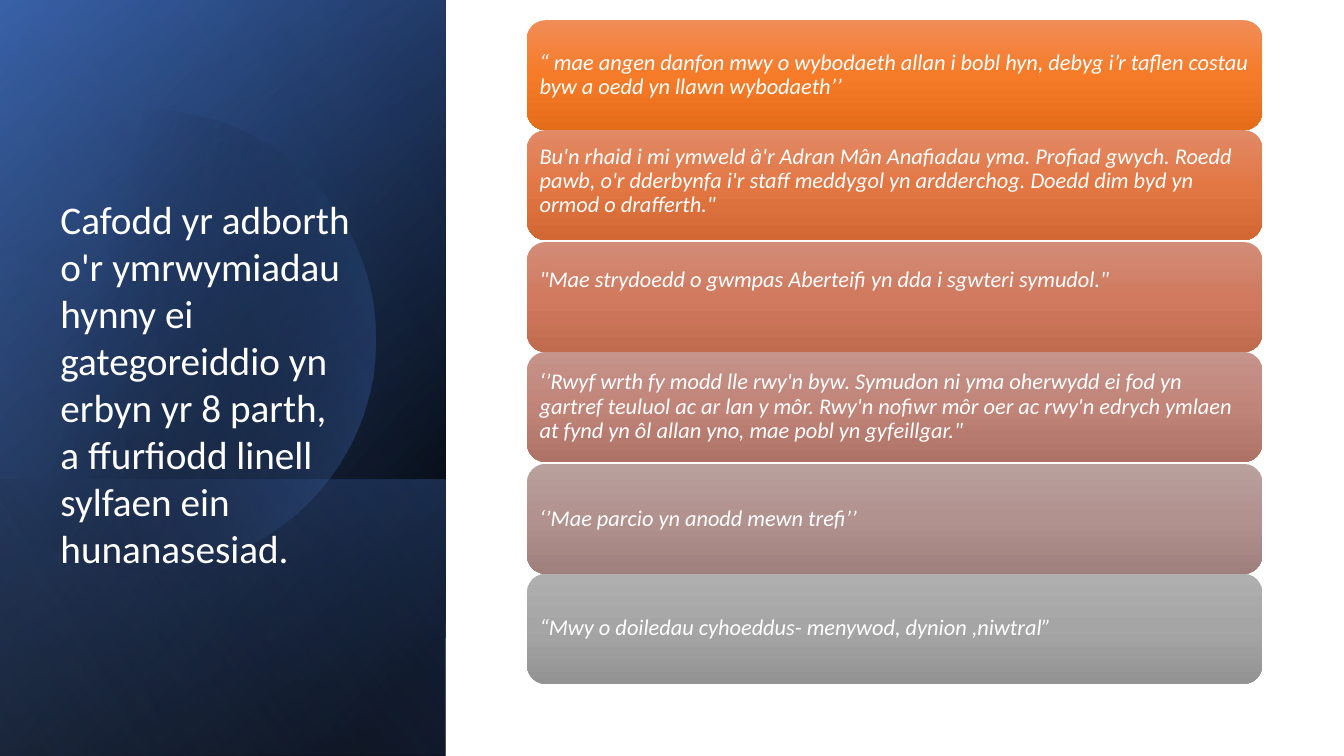
"""Build the slide of feedback quotes beside a dark title panel."""
from dataclasses import dataclass
from math import cos, radians, sin

from lxml import etree
from pptx import Presentation
from pptx.dml.color import RGBColor
from pptx.enum import shapes, text
from pptx.oxml import ns
from pptx import util as u

WHITE = RGBColor(0xFF, 0xFF, 0xFF)
BLACK = RGBColor(0x00, 0x00, 0x00)
NAVY = RGBColor(0x2F, 0x55, 0x97)
BLUE = RGBColor(0x44, 0x72, 0xC4)
PALE_BLUE = RGBColor(0x8F, 0xAA, 0xDC)
ORANGE = RGBColor(0xF1, 0x8C, 0x57), RGBColor(0xF6, 0x7B, 0x28), RGBColor(0xE5, 0x6C, 0x19)
RUST = RGBColor(0xE1, 0x8A, 0x66), RGBColor(0xE3, 0x77, 0x44), RGBColor(0xD2, 0x67, 0x34)
CORAL = RGBColor(0xD2, 0x8C, 0x78), RGBColor(0xD1, 0x7A, 0x5F), RGBColor(0xC0, 0x6A, 0x4E)
ROSE = RGBColor(0xC5, 0x94, 0x8B), RGBColor(0xC1, 0x84, 0x78), RGBColor(0xAF, 0x72, 0x67)
MAUVE = RGBColor(0xB9, 0xA0, 0x9D), RGBColor(0xB2, 0x92, 0x8F), RGBColor(0xA0, 0x80, 0x7D)
GREY = RGBColor(0xAF, 0xAF, 0xAF), RGBColor(0xA5, 0xA5, 0xA5), RGBColor(0x93, 0x93, 0x93)

PANEL_W, SLIDE_W, SLIDE_H = 11.23, 33.86, 19.05
CARD_X, CARD_Y, CARD_W, CARD_H = 13.28, 0.51, 18.52, 2.77
PAIR_PITCH = 5.59


@dataclass(frozen=True)
class Stop:
    """One gradient stop, with position and opacity in percent."""
    pos: int
    color: RGBColor
    alpha: int = 100


@dataclass(frozen=True)
class Layer:
    """A gradient layer of the panel, from its top to the slide's bottom."""
    top: float
    stops: tuple[Stop, ...]
    angle: int


@dataclass(frozen=True)
class Card:
    """A quote, its colours and the extra room below its text."""
    quote: str
    colors: tuple[RGBColor, RGBColor, RGBColor]
    room: float = 0


BACK_LAYERS = (
    Layer(0, (Stop(8, BLACK), Stop(100, NAVY)), 50),
    Layer(0, (Stop(0, BLACK, 0), Stop(99, BLUE, 46)), 30),
    Layer(12.09, (Stop(2, BLUE, 29), Stop(100, BLACK, 30)), 130),
)
FRONT_LAYER = Layer(0, (Stop(0, BLACK, 0), Stop(99, PALE_BLUE, 11)), 120)
DISC_STOPS = (Stop(29, BLACK, 0), Stop(100, BLUE, 43))

CARDS = (
    Card("“ mae angen danfon mwy o wybodaeth allan i bobl hyn, debyg i’r taflen costau "
         "byw a oedd yn llawn wybodaeth’’", ORANGE),
    Card("Bu'n rhaid i mi ymweld â'r Adran Mân Anafiadau yma. Profiad gwych. Roedd pawb, "
         "o'r dderbynfa i'r staff meddygol yn ardderchog. Doedd dim byd yn ormod o "
         "drafferth.\"", RUST, 0.2),
    Card("\"Mae strydoedd o gwmpas Aberteifi yn dda i sgwteri symudol.\"", CORAL, 0.84),
    Card("‘’Rwyf wrth fy modd lle rwy'n byw. Symudon ni yma oherwydd ei fod yn gartref "
         "teuluol ac ar lan y môr. Rwy'n nofiwr môr oer ac rwy'n edrych ymlaen at fynd yn "
         "ôl allan yno, mae pobl yn gyfeillgar.\"", ROSE),
    Card("‘’Mae parcio yn anodd mewn trefi’’", MAUVE),
    Card("“Mwy o doiledau cyhoeddus- menywod, dynion ,niwtral”", GREY),
)
TITLE = ("Cafodd yr adborth o'r ymrwymiadau hynny ei gategoreiddio yn erbyn yr 8 parth,",
         "a ffurfiodd linell sylfaen ein hunanasesiad.")


def apply(target, values: dict) -> None:
    """Set every attribute named in values."""
    for name, value in values.items():
        setattr(target, name, value)


def paint(sp, stops: tuple[Stop, ...], angle: int) -> None:
    """Give a shape a linear gradient, without line or shadow."""
    sp.shadow.inherit = False
    sp.line.fill.background()
    sp.fill.background()
    grad = etree.Element(ns.qn("a:gradFill"), rotWithShape="1")
    stop_list = etree.SubElement(grad, ns.qn("a:gsLst"))
    for stop in stops:
        gs = etree.SubElement(stop_list, ns.qn("a:gs"), pos=str(stop.pos * 1000))
        color = etree.SubElement(gs, ns.qn("a:srgbClr"), val=str(stop.color))
        etree.SubElement(color, ns.qn("a:alpha"), val=str(stop.alpha * 1000))
    etree.SubElement(grad, ns.qn("a:lin"), ang=str(angle * 60000), scaled="0")
    sp_pr = sp.element.spPr
    sp_pr.replace(sp_pr.find(ns.qn("a:noFill")), grad)


def write(sp, paragraphs: tuple[str, ...], frame: dict, para: dict, font: dict) -> None:
    """Fill a shape with formatted white Calibri text."""
    tf = sp.text_frame
    apply(tf, {"word_wrap": True, "auto_size": text.MSO_AUTO_SIZE.NONE,
               "vertical_anchor": text.MSO_ANCHOR.MIDDLE, **frame})
    for i, line in enumerate(paragraphs):
        p = tf.add_paragraph() if i else tf.paragraphs[0]
        apply(p, {"alignment": text.PP_ALIGN.LEFT, "space_before": u.Pt(0), **para})
        r = p.add_run()
        r.text = line
        apply(r.font, {"name": "Calibri", **font})
        r.font.color.rgb = WHITE


def add_layer(s, layer: Layer) -> None:
    """Draw a panel layer as a mirrored rectangle turned by a quarter."""
    length = SLIDE_H - layer.top
    sp = s.shapes.add_shape(
        shapes.MSO_SHAPE.RECTANGLE, u.Cm((PANEL_W - length) / 2),
        u.Cm(layer.top + (length - PANEL_W) / 2), u.Cm(length), u.Cm(PANEL_W))
    sp.rotation = 90
    sp.element.spPr.xfrm.set("flipH", "1")
    paint(sp, layer.stops, layer.angle)


def add_disc(s) -> None:
    """Draw the disc that the left slide edge cuts."""
    cx, cy, radius = 3.66, 8.56, 5.8
    arc = [(u.Cm(max(0, cx + radius * cos(radians(a)))), u.Cm(cy + radius * sin(radians(a))))
           for a in range(-129, 130, 2)]
    builder = s.shapes.build_freeform(*arc[0])
    builder.add_line_segments(arc[1:], close=True)
    paint(builder.convert_to_shape(), DISC_STOPS, 14)


def add_card(s, index: int, card: Card) -> None:
    """Draw one quote card; cards stand in pairs that touch."""
    pair, second = divmod(index, 2)
    top = CARD_Y + pair * PAIR_PITCH + second * CARD_H
    sp = s.shapes.add_shape(shapes.MSO_SHAPE.ROUNDED_RECTANGLE, u.Cm(CARD_X), u.Cm(top),
                            u.Cm(CARD_W), u.Cm(CARD_H))
    paint(sp, tuple(Stop(pos, c) for pos, c in zip((0, 50, 100), card.colors)), 90)
    write(sp, (card.quote,),
          {"margin_left": u.Cm(0.18), "margin_right": u.Cm(0.18),
           "margin_top": u.Cm(0.18), "margin_bottom": u.Cm(0.18 + card.room)},
          {"line_spacing": 0.9}, {"size": u.Pt(16), "italic": True})


def main() -> None:
    """Build and save the slide."""
    prs = Presentation()
    apply(prs, {"slide_width": u.Cm(SLIDE_W), "slide_height": u.Cm(SLIDE_H)})
    s = prs.slides.add_slide(prs.slide_layouts[5])
    for layer in BACK_LAYERS:
        add_layer(s, layer)
    add_disc(s)
    add_layer(s, FRONT_LAYER)
    for index, card in enumerate(CARDS):
        add_card(s, index, card)
    title = s.shapes.title
    apply(title, {"left": u.Cm(1.27), "top": u.Cm(4.75),
                  "width": u.Cm(8.66), "height": u.Cm(9.83)})
    write(title, TITLE, {}, {}, {"size": u.Pt(28)})
    s.shapes.element.append(title.element)
    prs.save("out.pptx")


if __name__ == "__main__":
    main()
